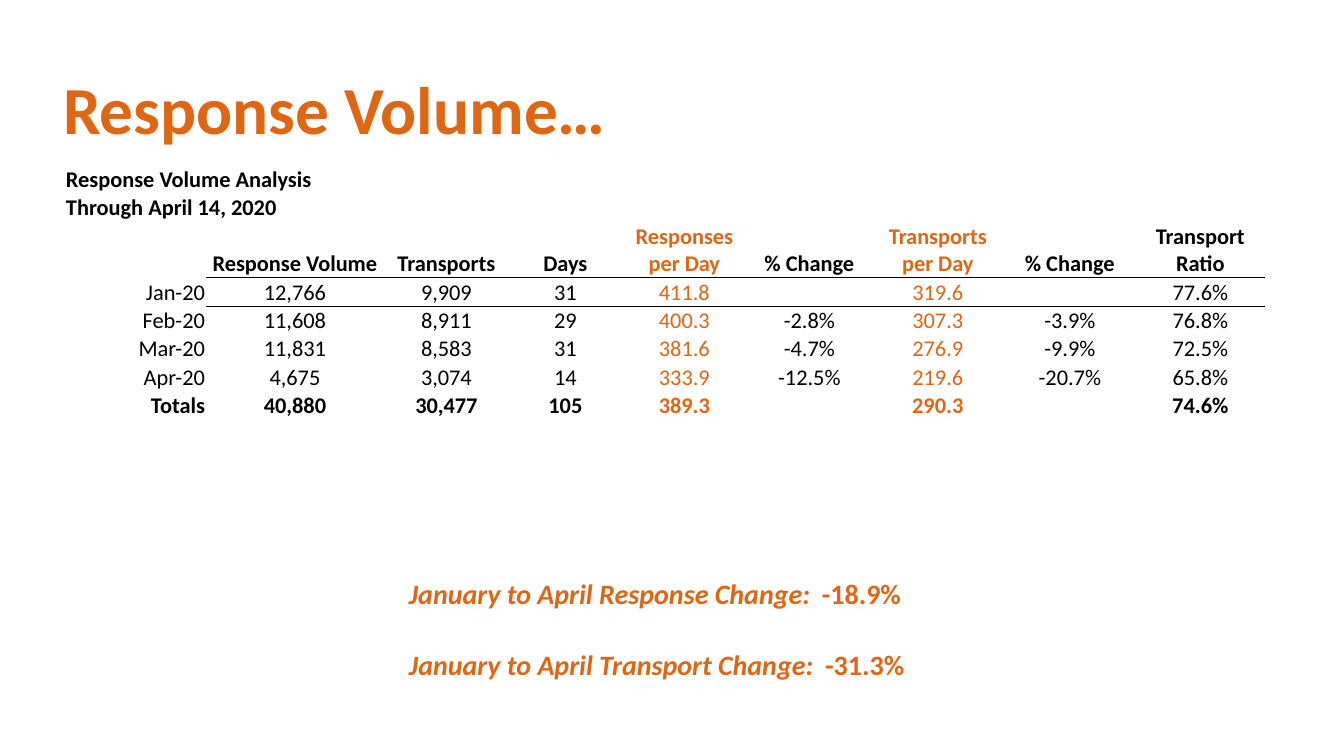
from lxml import etree
from pptx import Presentation
from pptx.dml.color import RGBColor
from pptx.enum.text import MSO_ANCHOR, PP_ALIGN
from pptx.oxml.ns import qn
from pptx.util import Emu, Pt

LEFT, MID, RIGHT = PP_ALIGN.LEFT, PP_ALIGN.CENTER, PP_ALIGN.RIGHT
CENTER, BASE = MSO_ANCHOR.MIDDLE, MSO_ANCHOR.BOTTOM

ORANGE = RGBColor(0xDF, 0x66, 0x13)
BLACK = RGBColor(0, 0, 0)
FONT = "Calibri"
PLAIN = "{2D5ABB26-0587-4C30-8999-92F81FD0307C}"

COLS = [141, 178, 125, 113, 125, 125, 132, 132, 129]
ROWS = [27, 27, 54, 27, 27, 27, 27, 27]
HEAD, LAST = 2, len(ROWS) - 1
RATES = (4, 6)
DATA = [
    ["Response Volume Analysis"],
    ["Through April 14, 2020"],
    ["", "Response Volume", "Transports", "Days", "Responses per Day",
     "% Change", "Transports per Day", "% Change", "Transport Ratio"],
    ["Jan-20", "12,766", "9,909", "31", "411.8", "", "319.6", "", "77.6%"],
    ["Feb-20", "11,608", "8,911", "29", "400.3", "-2.8%", "307.3", "-3.9%", "76.8%"],
    ["Mar-20", "11,831", "8,583", "31", "381.6", "-4.7%", "276.9", "-9.9%", "72.5%"],
    ["Apr-20", "4,675", "3,074", "14", "333.9", "-12.5%", "219.6", "-20.7%", "65.8%"],
    ["Totals", "40,880", "30,477", "105", "389.3", "", "290.3", "", "74.6%"],
]


def px(n):
    return Emu(round(n * 914400 / 100.8))


def write(para, text, size=16, color=BLACK, bold=False, italic=False, align=LEFT):
    """Append one formatted run to a paragraph."""
    para.alignment = align
    run = para.add_run()
    run.text = text
    font = run.font
    font.name, font.size = FONT, Pt(size)
    font.bold, font.italic = bold, italic
    font.color.rgb = color


def rule(cell, side):
    """Draw a thin black border on one side of a cell."""
    line = etree.Element(qn("a:" + side), w=str(Pt(0.5)))
    fill = etree.SubElement(line, qn("a:solidFill"))
    etree.SubElement(fill, qn("a:srgbClr"), val=str(BLACK))
    cell._tc.get_or_add_tcPr().insert(0, line)


def add_title(slide, x, y, w, h):
    title = slide.shapes.title
    title.left, title.top, title.width, title.height = map(px, (x, y, w, h))
    frame = title.text_frame
    frame.vertical_anchor = CENTER
    para = frame.paragraphs[0]
    para.line_spacing = 0.9
    write(para, "Response Volume…", size=48, color=ORANGE, bold=True)


def fill_cell(cell, text, row, col):
    cell.fill.background()
    cell.vertical_anchor = BASE
    cell.margin_left = cell.margin_right = cell.margin_top = px(1)
    cell.margin_bottom = 0
    para = cell.text_frame.paragraphs[0]
    if text:
        align = LEFT if row < HEAD else MID if col else RIGHT
        write(para, text, color=ORANGE if col in RATES else BLACK,
              bold=row <= HEAD or row == LAST, align=align)
    else:
        etree.SubElement(para._p, qn("a:endParaRPr"), sz="1600")
    if col and row == HEAD:
        rule(cell, "lnB")
    elif col and row == HEAD + 1:
        rule(cell, "lnT")


def add_stats(slide, x, y):
    frame = slide.shapes.add_table(len(ROWS), len(COLS), px(x), px(y),
                                   px(sum(COLS)), px(sum(ROWS)))
    table = frame.table
    table.first_row = table.horz_banding = False
    table._tbl.tblPr.find(qn("a:tableStyleId")).text = PLAIN
    for col, wide in zip(table.columns, COLS):
        col.width = px(wide)
    for r, (high, texts) in enumerate(zip(ROWS, DATA)):
        table.rows[r].height = px(high)
        for c in range(len(COLS)):
            fill_cell(table.cell(r, c), texts[c] if c < len(texts) else "", r, c)
        if r < HEAD:
            table.cell(r, 0).merge(table.cell(r, 1))


def add_change(slide, x, y, w, h, label, value):
    frame = slide.shapes.add_textbox(*map(px, (x, y, w, h))).text_frame
    frame.word_wrap = True
    frame.margin_left = px(45)
    para = frame.paragraphs[0]
    write(para, label, size=20, color=ORANGE, bold=True, italic=True)
    write(para, " ", size=36, color=ORANGE, bold=True)
    write(para, value, size=20, color=ORANGE, bold=True)


def main():
    deck = Presentation()
    deck.slide_width, deck.slide_height = px(1344), px(756)
    slide = deck.slides.add_slide(deck.slide_layouts[5])
    add_title(slide, 53, 40, 1199, 146)
    add_stats(slide, 65, 165)
    add_change(slide, 364, 549, 562, 72, "January to April Response Change:", "-18.9%")
    add_change(slide, 364, 620, 577, 72, "January to April Transport Change:", "-31.3%")
    deck.save("out.pptx")


if __name__ == "__main__":
    main()
